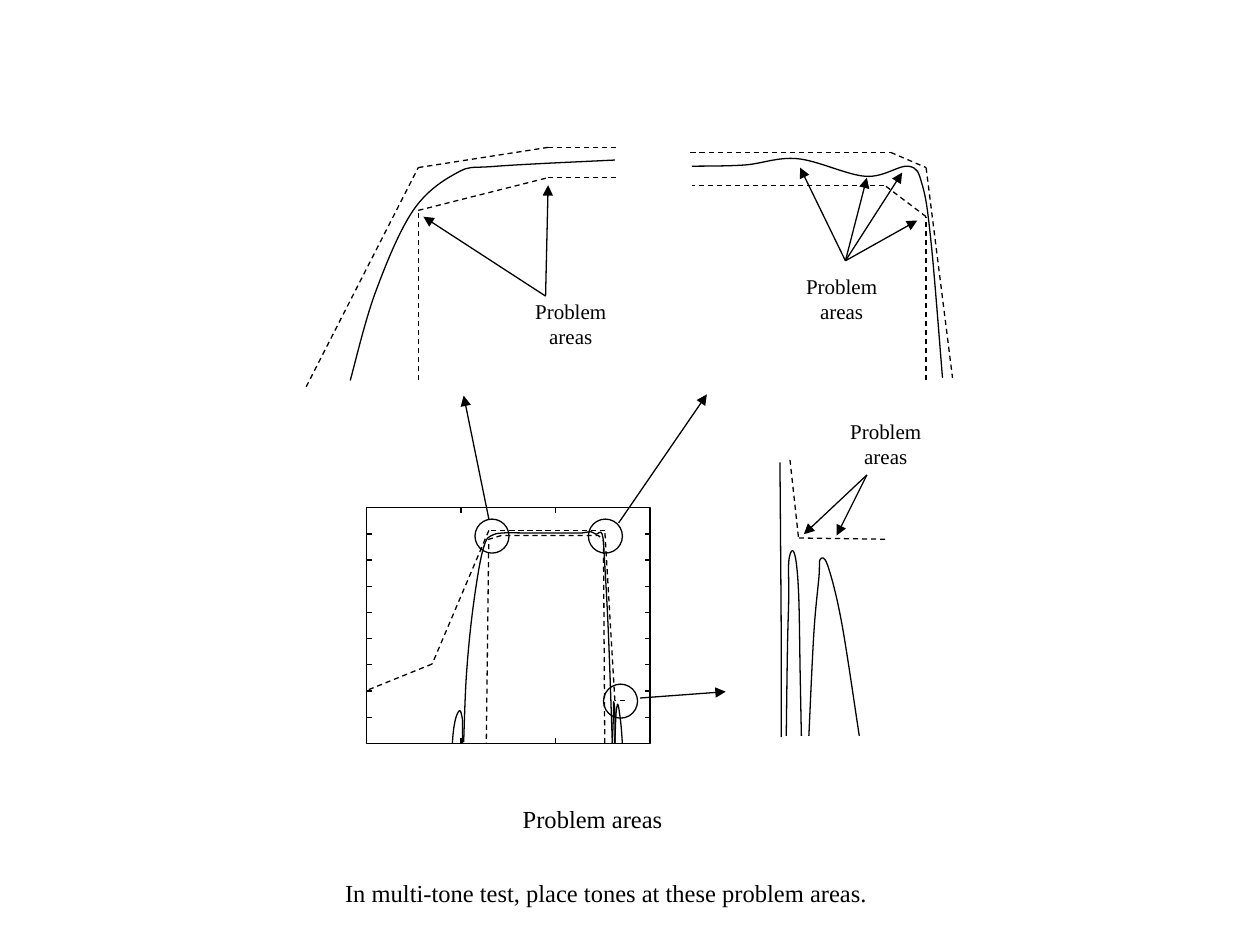
import lxml.etree
import pptx
import pptx.dml.color
import pptx.enum.dml
import pptx.enum.shapes
import pptx.enum.text
import pptx.oxml.ns
import pptx.util

BLACK = pptx.dml.color.RGBColor(0x00, 0x00, 0x00)
DASH = pptx.enum.dml.MSO_LINE.DASH
CM_PER_INCH = 2.54
qn = pptx.oxml.ns.qn


def lengths(*inches):
    return [pptx.util.Cm(value * CM_PER_INCH) for value in inches]


def set_outline(part, dashed=False):
    part.line.color.rgb = BLACK
    outline_format = {"width": pptx.util.Pt(0.75), "dash_style": DASH if dashed else None}
    for name, value in outline_format.items():
        setattr(part.line, name, value)


deck = pptx.Presentation()
deck.slide_width, deck.slide_height = lengths(10, 7.5)
slide = deck.slides.add_slide(deck.slide_layouts[6])
diagram = slide.shapes.add_group_shape().shapes

responses = [
    [(2.78, 3.02), (2.98, 2.32), (3.28, 1.67), (3.63, 1.37), (3.93, 1.32), (4.88, 1.27)],
    [(5.49, 1.32), (5.91, 1.31), (6.33, 1.26), (6.87, 1.4), (7.21, 1.32), (7.32, 1.47),
     (7.39, 1.93), (7.48, 3)],
    [(6.19, 3.67), (6.2, 5.01), (6.2, 5.85)],
    [(6.24, 5.84), (6.25, 5.13), (6.26, 4.74), (6.26, 4.46), (6.29, 4.37), (6.32, 4.47),
     (6.34, 4.76), (6.35, 5.32), (6.36, 5.84)],
    [(6.42, 5.84), (6.46, 5.02), (6.5, 4.58), (6.51, 4.44), (6.57, 4.49), (6.68, 4.94),
     (6.82, 5.84)],
    [(3.67, 5.9), (3.67, 5.79), (3.67, 5.71), (3.65, 5.64), (3.62, 5.69), (3.6, 5.79),
     (3.59, 5.9)],
    [(3.68, 5.89), (3.7, 5.39), (3.74, 4.94), (3.8, 4.52), (3.85, 4.31), (3.9, 4.25),
     (3.99, 4.23), (4.18, 4.23), (4.37, 4.23), (4.55, 4.23), (4.62, 4.23), (4.69, 4.22),
     (4.73, 4.24), (4.78, 4.24), (4.8, 4.48), (4.83, 5.05), (4.86, 5.9)],
    [(4.86, 5.9), (4.87, 5.64), (4.87, 5.57), (4.88, 5.65), (4.88, 5.9)],
    [(4.88, 5.9), (4.89, 5.66), (4.9, 5.6), (4.9, 5.59), (4.91, 5.61), (4.93, 5.76),
     (4.94, 5.9)],
]
lower_mask = [(4.8, 5.9), (4.79, 4.29), (4.75, 4.25), (3.98, 4.25), (3.88, 4.28), (3.86, 5.9)]

for points in responses + [lower_mask]:
    start, *rest = [lengths(*point) for point in points]
    builder = diagram.build_freeform(*start, scale=1.0)
    builder.add_line_segments(rest, close=False)
    curve = builder.convert_to_shape()
    curve.shadow.inherit = False
    curve.fill.background()
    set_outline(curve, dashed=points is lower_mask)
    if points is lower_mask:
        continue
    outline = curve._element.spPr
    knots = [(int(pt.get("x")), int(pt.get("y"))) for pt in outline.iter(qn("a:pt"))]
    padded = [knots[0], *knots, knots[-1]]
    for index, segment in enumerate(list(outline.iter(qn("a:lnTo")))):
        before, begin, end, after = padded[index:index + 4]
        leaving = [b + (e - p) / 6 for p, b, e in zip(before, begin, end)]
        arriving = [e - (a - b) / 6 for b, e, a in zip(begin, end, after)]
        bezier = lxml.etree.Element(qn("a:cubicBezTo"))
        for x, y in (leaving, arriving, end):
            lxml.etree.SubElement(bezier, qn("a:pt"), x=str(round(x)), y=str(round(y)))
        segment.getparent().replace(segment, bezier)

plot_left, plot_top, plot_width, plot_height = 2.91, 4.03, 2.25, 1.87
plot_right, plot_bottom = plot_left + plot_width, plot_top + plot_height
circle_size = 0.27
OVAL = pptx.enum.shapes.MSO_SHAPE.OVAL
outlines = [(pptx.enum.shapes.MSO_SHAPE.RECTANGLE, plot_left, plot_top, plot_width, plot_height)]
for left, top in [(4.67, 4.12), (3.77, 4.12), (4.79, 5.43)]:
    outlines.append((OVAL, left, top, circle_size, circle_size))
for kind, *box in outlines:
    frame = diagram.add_shape(kind, *lengths(*box))
    frame.shadow.inherit = False
    frame.fill.background()
    set_outline(frame)

masks = [
    [(6.27, 3.65), (6.34, 4.29)],
    [(6.34, 4.27), (7.05, 4.28)],
    [(5.48, 1.21), (7.07, 1.21), (7.35, 1.33), (7.56, 3)],
    [(7.35, 3.02), (7.35, 1.72), (7.02, 1.47), (5.49, 1.47)],
    [(2.43, 3.07), (3.32, 1.33), (4.35, 1.17), (4.91, 1.17)],
    [(3.32, 3.02), (3.32, 1.67), (4.35, 1.41), (4.89, 1.41)],
    [(4.96, 5.56), (4.88, 5.56), (4.8, 4.21), (3.88, 4.21), (3.43, 5.27), (2.91, 5.48)],
]
pointers = [
    ((3.88, 4.12), [(3.68, 3.14)]),
    ((4.91, 4.15), [(5.61, 3.13)]),
    ((5.08, 5.54), [(5.76, 5.49)]),
    ((6.88, 3.77), [(6.38, 4.24), (6.64, 4.25)]),
    ((6.71, 2.07), [(6.35, 1.33), (6.88, 1.41), (7.16, 1.37), (7.28, 1.75)]),
    ((4.33, 2.35), [(3.36, 1.72), (4.35, 1.47)]),
]
lines = [(a, b, "mask") for mask in masks for a, b in zip(mask, mask[1:])]
lines += [(origin, target, "pointer") for origin, targets in pointers for target in targets]

tick = 0.04
for row in range(1, 9):
    y = plot_top + plot_height * row / 9
    for x in (plot_left, plot_right - tick):
        lines.append(((x, y), (x + tick, y), "tick"))
for column in (1, 2):
    x = plot_left + plot_width * column / 3
    for y in (plot_top, plot_bottom - tick):
        lines.append(((x, y), (x, y + tick), "tick"))

for origin, target, role in lines:
    stroke = diagram.add_connector(
        pptx.enum.shapes.MSO_CONNECTOR.STRAIGHT, *lengths(*origin, *target))
    set_outline(stroke, dashed=role == "mask")
    if role == "pointer":
        lxml.etree.SubElement(stroke.line._get_or_add_ln(), qn("a:tailEnd"), type="triangle")
    lxml.etree.SubElement(stroke._element.spPr, qn("a:effectLst"))

CENTER = pptx.enum.text.PP_ALIGN.CENTER
LEFT = pptx.enum.text.PP_ALIGN.LEFT
FIXED = pptx.enum.text.MSO_AUTO_SIZE.NONE
GROW = pptx.enum.text.MSO_AUTO_SIZE.SHAPE_TO_FIT_TEXT
label_format = {"word_wrap": True, "auto_size": FIXED}
caption_format = {"word_wrap": False, "auto_size": GROW}
texts = [(diagram, "Problem\nareas", (left, top, 1.2, 0.55), 12, CENTER, label_format)
         for left, top in [(6.43, 3.27), (6.08, 2.12), (3.93, 2.32)]]
texts += [
    (slide.shapes, "Problem areas", (4.05, 6.33, 1.32, 0.34), 14, LEFT, caption_format),
    (slide.shapes, "In multi-tone test, place tones at these problem areas.",
     (2.64, 6.92, 4.38, 0.34), 14, LEFT, caption_format),
]
for owner, wording, box, size, alignment, frame_format in texts:
    words = owner.add_textbox(*lengths(*box)).text_frame
    words.text = wording
    for name, value in frame_format.items():
        setattr(words, name, value)
    for paragraph in words.paragraphs:
        paragraph.alignment = alignment
        font = paragraph.runs[0].font
        for name, value in {"name": "Times New Roman", "size": pptx.util.Pt(size)}.items():
            setattr(font, name, value)
        font.color.rgb = BLACK

deck.save("out.pptx")
